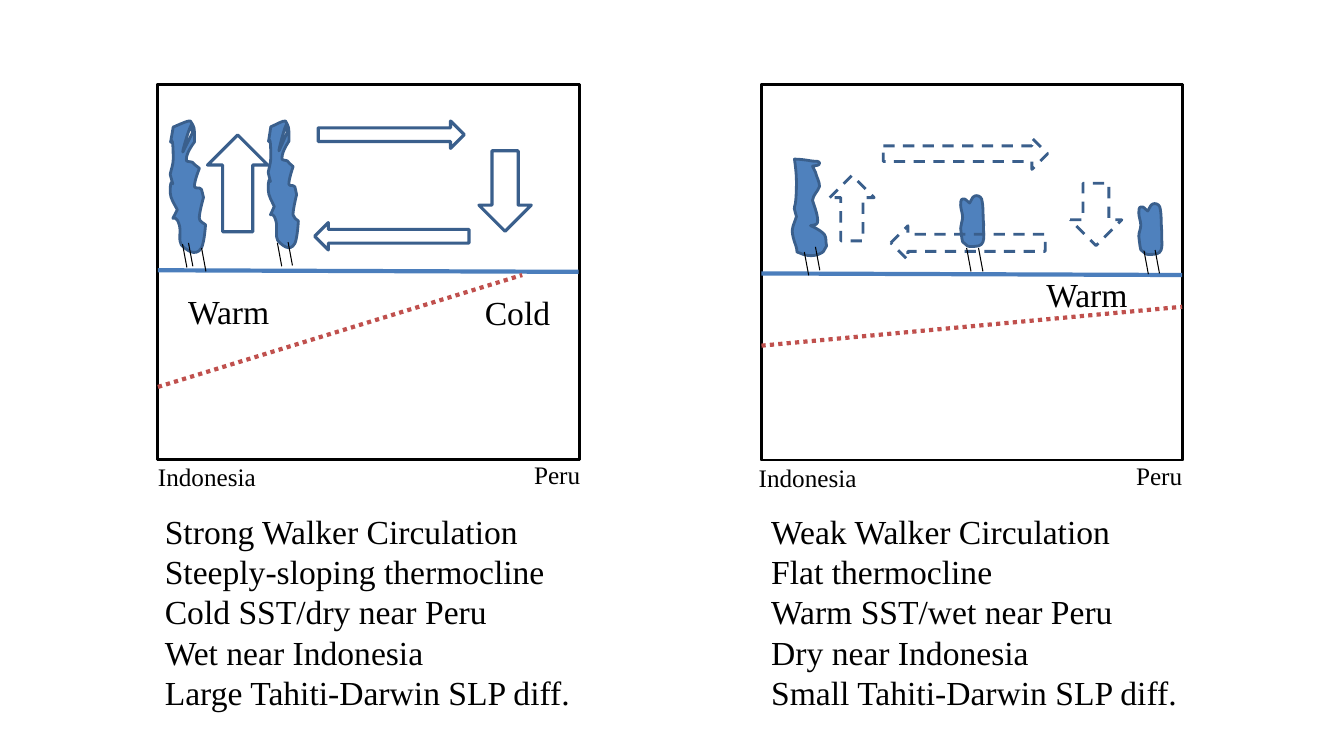
from dataclasses import dataclass

import pptx
import pptx.dml.color
import pptx.enum.dml
import pptx.enum.shapes
import pptx.enum.text
import pptx.oxml.ns
import pptx.oxml.xmlchemy
import pptx.util

Cm, Pt = pptx.util.Cm, pptx.util.Pt
qn, OxmlElement = pptx.oxml.ns.qn, pptx.oxml.xmlchemy.OxmlElement
SHAPE = pptx.enum.shapes.MSO_SHAPE
DASH = pptx.enum.dml.MSO_LINE
FONT = "Times New Roman"
BLACK, BLUE, OUTLINE = "000000", "4F81BD", "3A5F8C"
SURFACE, THERMOCLINE = "4B7EBC", "C0504D"
FRAME_W, FRAME_H = 10.62, 9.45
RAIN_DX, RAIN_DY = 0.11, 0.59


@dataclass
class Outline:
    """Start point, then curves (two controls, end) or straight ends, in a w by h box."""
    w: float
    h: float
    start: tuple
    segments: list


@dataclass
class Box:
    kind: object  # preset shape, cloud outline or label text
    x: float
    y: float
    w: float
    h: float
    size: int = 24


@dataclass
class Panel:
    left: float
    top: float
    surface: tuple
    thermocline: tuple
    clouds: list
    arrows: list
    arrow_width: float
    arrow_dash: object
    rain: list
    labels: list
    list_left: float
    list_width: float
    notes: list


# Cloud outlines
TALL = Outline(35, 130, (11, 123), [
    (15, 127, 25, 136, 31, 126), (34, 120, 35, 103, 35, 103),
    (33, 101, 29, 100, 29, 97), (28, 95, 32, 79, 33, 76),
    (32, 73, 32, 70, 31, 68), (29, 65, 25, 68, 24, 65),
    (24, 59, 29, 47, 29, 47), (26, 45, 24, 43, 22, 41),
    (20, 40, 15, 41, 16, 38), (16, 31, 24, 21, 24, 21),
    (24, 15, 25, 7, 22, 3), (20, 1, 10, 37, 13, 30),
    (22, 12), (21, 8, 23, 2, 20, 0),
    (18, -1, 6, 5, 3, 6), (-3, 42, 3, -3, 3, 38),
    (3, 43, 1, 48, 0, 53), (6, 76, 0, 47, 0, 71),
    (0, 77, 5, 84, 7, 88), (-2, 107, 4, 87, 9, 103),
    (11, 109, 8, 119, 11, 123)])
LEANING = Outline(34, 96, (7, 93), [
    (11, 95, 20, 98, 29, 93), (32, 92, 32, 88, 34, 86),
    (33, 82, 34, 78, 32, 75), (28, 70, 18, 66, 18, 66),
    (20, 65, 24, 66, 25, 63), (26, 57, 22, 47, 20, 41),
    (21, 38, 21, 36, 23, 34), (24, 31, 27, 30, 27, 27),
    (27, 22, 24, 18, 23, 13), (20, 7),
    (23, 6, 27, 7, 27, 4), (27, 2, 23, 2, 20, 2),
    (14, 1, 8, 0, 2, 0), (3, 7, 4, 15, 4, 22),
    (4, 60, -1, 39, 4, 57), (0, 69, -2, 69, 2, 82),
    (7, 95, 2, 91, 7, 93)])
SMALL = Outline(23, 50, (5, 48), [
    (7, 51, 11, 50, 14, 50), (27, 50, 22, 38, 23, 28),
    (22, 19, 23, 11, 21, 3), (20, 0, 16, -1, 14, 0),
    (11, 1, 11, 5, 9, 7), (7, 6, 5, 2, 2, 3),
    (0, 3, 0, 7, 0, 9), (0, 13, 2, 17, 2, 21),
    (2, 25, 0, 28, 0, 32), (2, 50, 2, 45, 5, 48)])

# Strong and weak circulation, lengths in centimetres
PANELS = [
    Panel(3.98, 2.13, (3.98, 6.81, 14.58, 6.85), (3.98, 9.75, 13.16, 6.93),
          [Box(TALL, 6.76, 3.05, 0.76, 3.18), Box(TALL, 4.29, 3.05, 0.89, 3.3)],
          [Box(SHAPE.DOWN_ARROW, 12.07, 3.8, 1.32, 2.03),
           Box(SHAPE.UP_ARROW, 5.23, 3.4, 1.52, 2.44),
           Box(SHAPE.RIGHT_ARROW, 8.02, 3.05, 3.68, 0.69),
           Box(SHAPE.LEFT_ARROW, 7.93, 5.61, 3.89, 0.69)],
          2.25, DASH.SOLID,
          [(5.08, 6.25), (4.75, 6.12), (4.6, 6.15), (7.26, 6.1), (6.99, 6.12)],
          [Box("Warm", 4.49, 7.21, 2.59, 1.27), Box("Cold", 11.97, 7.22, 2.18, 1.27),
           Box("Indonesia", 3.73, 11.49, 3, 1.02, 18),
           Box("Peru", 13.21, 11.46, 1.68, 1.02, 18)],
          3.9, 11.02,
          ["Strong Walker Circulation", "Steeply-sloping thermocline",
           "Cold SST/dry near Peru", "Wet near Indonesia",
           "Large Tahiti-Darwin SLP diff."]),
    Panel(19.19, 2.14, (19.19, 6.89, 29.79, 6.93), (19.19, 8.71, 29.79, 7.73),
          [Box(SMALL, 28.7, 5.14, 0.58, 1.27), Box(SMALL, 24.21, 4.94, 0.58, 1.27),
           Box(LEANING, 19.97, 4.01, 0.86, 2.44)],
          [Box(SHAPE.DOWN_ARROW, 26.97, 4.62, 1.3, 1.57),
           Box(SHAPE.UP_ARROW, 20.91, 4.42, 1.12, 1.65),
           Box(SHAPE.RIGHT_ARROW, 22.26, 3.48, 4.14, 0.79),
           Box(SHAPE.LEFT_ARROW, 22.45, 5.69, 3.89, 0.86)],
          2, DASH.DASH,
          [(20.55, 6.22), (20.27, 6.35), (24.66, 6.25), (24.36, 6.25),
           (29.11, 6.3), (28.83, 6.32)],
          [Box("Warm", 26.12, 6.78, 2.59, 1.27),
           Box("Indonesia", 18.87, 11.53, 3, 1.02, 18),
           Box("Peru", 28.38, 11.47, 1.68, 1.02, 18)],
          19.18, 11.13,
          ["Weak Walker Circulation", "Flat thermocline",
           "Warm SST/wet near Peru", "Dry near Indonesia",
           "Small Tahiti-Darwin SLP diff."]),
]


def color(value: str) -> pptx.dml.color.RGBColor:
    return pptx.dml.color.RGBColor.from_string(value)


def style(sp, fill, line: str, width: float, dash=DASH.SOLID) -> None:
    sp.shadow.inherit = False
    if fill:
        sp.fill.solid()
        sp.fill.fore_color.rgb = color(fill)
    else:
        sp.fill.background()
    sp.line.color.rgb = color(line)
    sp.line.width = Pt(width)
    sp.line.dash_style = dash


def add_preset(s, b: Box):
    return s.shapes.add_shape(b.kind, Cm(b.x), Cm(b.y), Cm(b.w), Cm(b.h))


def add_line(s, ends: tuple, line: str, width: float, dash=DASH.SOLID) -> None:
    c = s.shapes.add_connector(pptx.enum.shapes.MSO_CONNECTOR.STRAIGHT,
                               *[Cm(v) for v in ends])
    c.line.color.rgb = color(line)
    c.line.width = Pt(width)
    c.line.dash_style = dash
    c._element.spPr.append(OxmlElement("a:effectLst"))


def add_cloud(s, b: Box) -> None:
    def place(x: float, y: float) -> tuple:
        return Cm(b.x + x * b.w / b.kind.w), Cm(b.y + y * b.h / b.kind.h)

    fb = s.shapes.build_freeform(*place(*b.kind.start))
    fb.add_line_segments([place(*seg[-2:]) for seg in b.kind.segments], close=True)
    sp = fb.convert_to_shape()
    # Bend the straight segments that have control points
    for line, seg in zip(list(sp._element.iter(qn("a:lnTo"))), b.kind.segments):
        if len(seg) == 2:
            continue
        curve = OxmlElement("a:cubicBezTo")
        for i in (0, 2):
            x, y = place(*seg[i:i + 2])
            pt = OxmlElement("a:pt")
            pt.set("x", str(x - sp.left))
            pt.set("y", str(y - sp.top))
            curve.append(pt)
        curve.append(line[0])
        line.getparent().replace(line, curve)
    style(sp, BLUE, OUTLINE, 2)


def add_run(p, text: str, size: int) -> None:
    r = p.add_run()
    r.text = text
    r.font.name, r.font.size = FONT, Pt(size)
    r.font.color.rgb = color(BLACK)


def add_label(s, b: Box) -> None:
    tf = s.shapes.add_textbox(Cm(b.x), Cm(b.y), Cm(b.w), Cm(b.h)).text_frame
    tf.word_wrap = False
    add_run(tf.paragraphs[0], b.kind, b.size)


def fill_list(sp, panel: Panel) -> None:
    sp.left, sp.top = Cm(panel.list_left), Cm(12.74)
    sp.width, sp.height = Cm(panel.list_width), Cm(5.38)
    tf = sp.text_frame
    tf.auto_size = pptx.enum.text.MSO_AUTO_SIZE.NONE
    for i, text in enumerate(panel.notes):
        p = tf.add_paragraph() if i else tf.paragraphs[0]
        p.space_before = Pt(0)
        pPr = p._p.get_or_add_pPr()
        pPr.set("marL", "0")
        pPr.set("indent", "0")
        pPr.append(OxmlElement("a:buNone"))
        add_run(p, text, 24)


def draw_panel(s, panel: Panel) -> None:
    frame = add_preset(s, Box(SHAPE.FRAME, panel.left, panel.top, FRAME_W, FRAME_H))
    frame.adjustments[0] = 0
    style(frame, BLUE, BLACK, 2)
    add_line(s, panel.surface, SURFACE, 3)
    add_line(s, panel.thermocline, THERMOCLINE, 3, DASH.ROUND_DOT)
    for cloud in panel.clouds:
        add_cloud(s, cloud)
    for arrow in panel.arrows:
        style(add_preset(s, arrow), None, OUTLINE, panel.arrow_width, panel.arrow_dash)
    for x, y in panel.rain:
        add_line(s, (x, y, x + RAIN_DX, y + RAIN_DY), BLACK, 0.75)
    for label in panel.labels:
        add_label(s, label)


def main() -> None:
    prs = pptx.Presentation()
    prs.slide_width, prs.slide_height = Cm(33.87), Cm(19.05)
    s = prs.slides.add_slide(prs.slide_layouts[3])
    title = s.shapes.title._element
    title.getparent().remove(title)
    for body, panel in zip(list(s.placeholders), PANELS):
        draw_panel(s, panel)
        fill_list(body, panel)
    prs.save("out.pptx")


if __name__ == "__main__":
    main()
